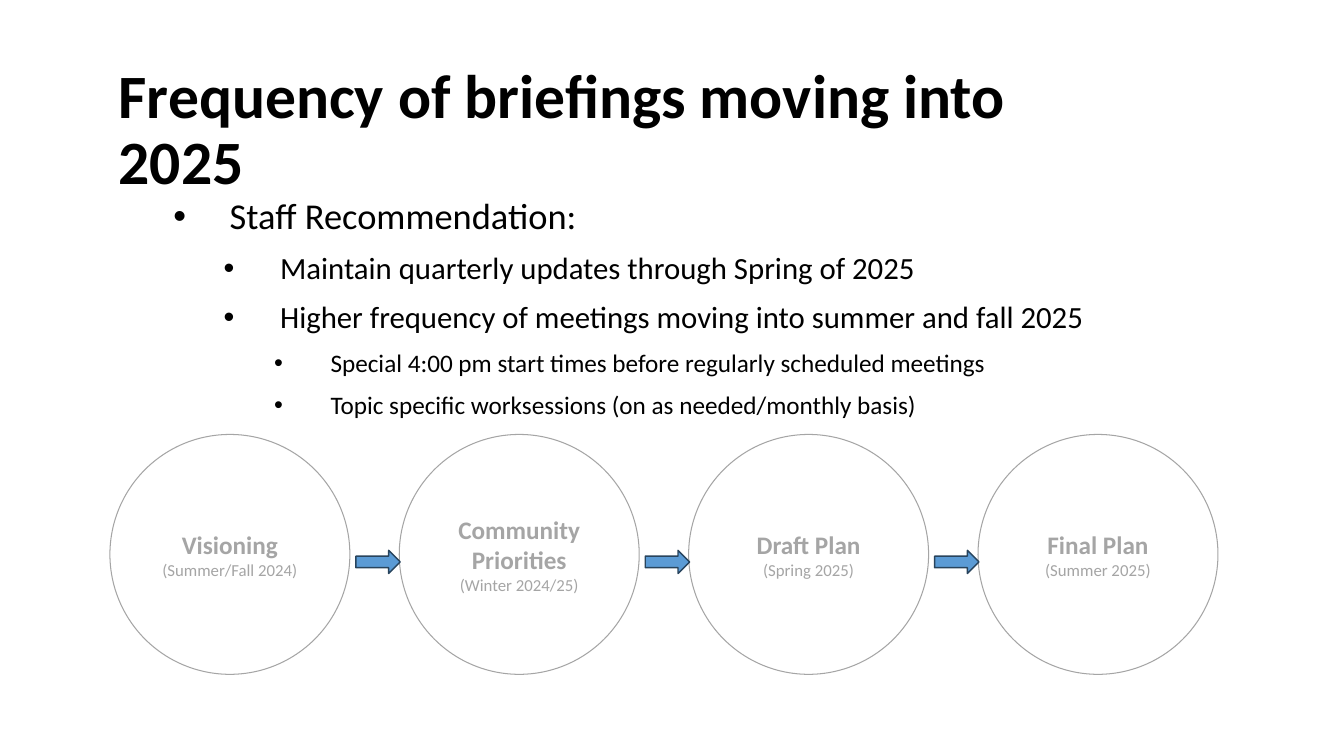
"""Builds the slide on how often briefings are held moving into 2025."""
from lxml import etree
from pptx import Presentation
from pptx.dml.color import RGBColor
from pptx.enum.shapes import MSO_SHAPE
from pptx.enum.text import MSO_ANCHOR, PP_ALIGN
from pptx.oxml.ns import qn
from pptx.util import Inches, Pt

MIDDLE, CENTER = MSO_ANCHOR.MIDDLE, PP_ALIGN.CENTER
OVAL, ARROW = MSO_SHAPE.OVAL, MSO_SHAPE.RIGHT_ARROW
FONT = "Calibri"
COLORS = {"text": "000000", "stage": "A5A5A5", "arrow": "5B9BD5", "arrow_edge": "28445D"}


def add_run(paragraph, text, size, color, bold=False):
    run = paragraph.add_run()
    run.text = text
    run.font.name = FONT
    run.font.size = Pt(size)
    run.font.bold = bold
    run.font.color.rgb = RGBColor.from_string(COLORS[color])


def add_outlined(kind, left, top, width, height, color, weight):
    shape = slide.shapes.add_shape(kind, Inches(left), Inches(top), Inches(width), Inches(height))
    shape.shadow.inherit = False
    shape.line.color.rgb = RGBColor.from_string(COLORS[color])
    shape.line.width = Pt(weight)
    return shape


prs = Presentation()
prs.slide_width, prs.slide_height = Inches(13.33), Inches(7.5)
slide = prs.slides.add_slide(prs.slide_layouts[6])

title = slide.shapes.add_textbox(Inches(1.08), Inches(0.92), Inches(10.3), Inches(0.77)).text_frame
title.word_wrap = True
title.vertical_anchor = MIDDLE
title.paragraphs[0].line_spacing = 0.9
add_run(title.paragraphs[0], "Frequency of briefings moving into 2025", 44, "text", True)

recommendations = [
    (0, "Staff Recommendation:"),
    (1, "Maintain quarterly updates through Spring of 2025"),
    (1, "Higher frequency of meetings moving into summer and fall 2025"),
    (2, "Special 4:00 pm start times before regularly scheduled meetings"),
    (2, "Topic specific worksessions (on as needed/monthly basis)"),
]
level_sizes = [26, 22, 18]
body = slide.shapes.add_textbox(Inches(1.62), Inches(1.92), Inches(10.78), Inches(4.15)).text_frame
body.word_wrap = True
for index, (level, text) in enumerate(recommendations):
    item = body.add_paragraph() if index else body.paragraphs[0]
    item.level = level
    item.line_spacing = 0.9
    item.space_before = Pt(5 if index else 0)
    item.space_after = Pt(6)
    properties = item._p.get_or_add_pPr()
    properties.set("marL", str(Inches(0.56 + 0.5 * level)))
    properties.set("indent", str(Inches(-0.56)))
    etree.SubElement(properties, qn("a:buFont")).set("typeface", "Arial")
    etree.SubElement(properties, qn("a:buChar")).set("char", "•")
    add_run(item, text, level_sizes[level], "text")

stages = [
    (["Visioning"], "(Summer/Fall 2024)"),
    (["Community", "Priorities"], "(Winter 2024/25)"),
    (["Draft Plan"], "(Spring 2025)"),
    (["Final Plan"], "(Summer 2025)"),
]
stage_left, stage_top, diameter, pitch = 1.09, 4.31, 2.38, 2.87
for index, (name_lines, period) in enumerate(stages):
    left = stage_left + index * pitch
    circle = add_outlined(OVAL, left, stage_top, diameter, diameter, "stage", 0.75)
    circle.fill.background()
    label = circle.text_frame
    label.word_wrap = True
    label.vertical_anchor = MIDDLE
    for row, text in enumerate(name_lines + [period]):
        line = label.add_paragraph() if row else label.paragraphs[0]
        line.alignment = CENTER
        is_name = row < len(name_lines)
        add_run(line, text, 18 if is_name else 12, "stage", is_name)

for index in range(len(stages) - 1):
    arrow = add_outlined(ARROW, 3.53 + index * pitch, 5.46, 0.44, 0.23, "arrow_edge", 1)
    arrow.fill.solid()
    arrow.fill.fore_color.rgb = RGBColor.from_string(COLORS["arrow"])

prs.save("out.pptx")
